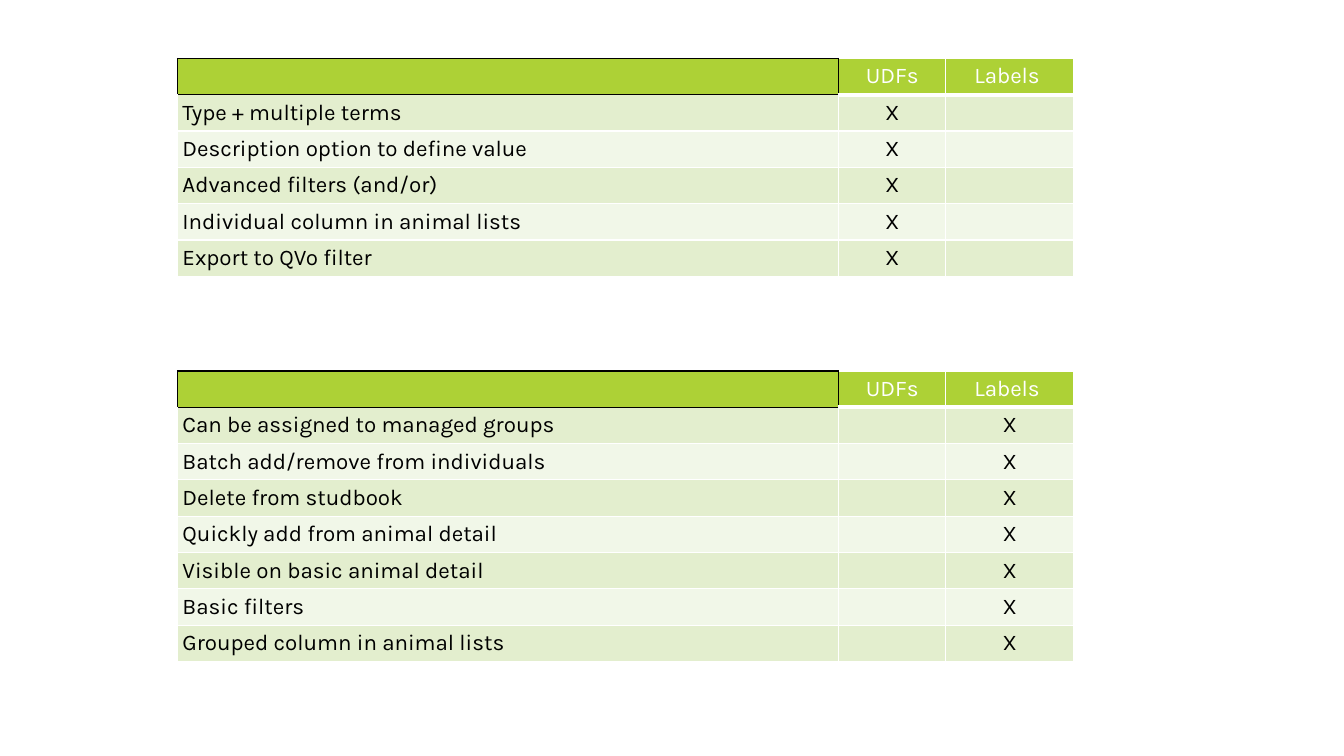
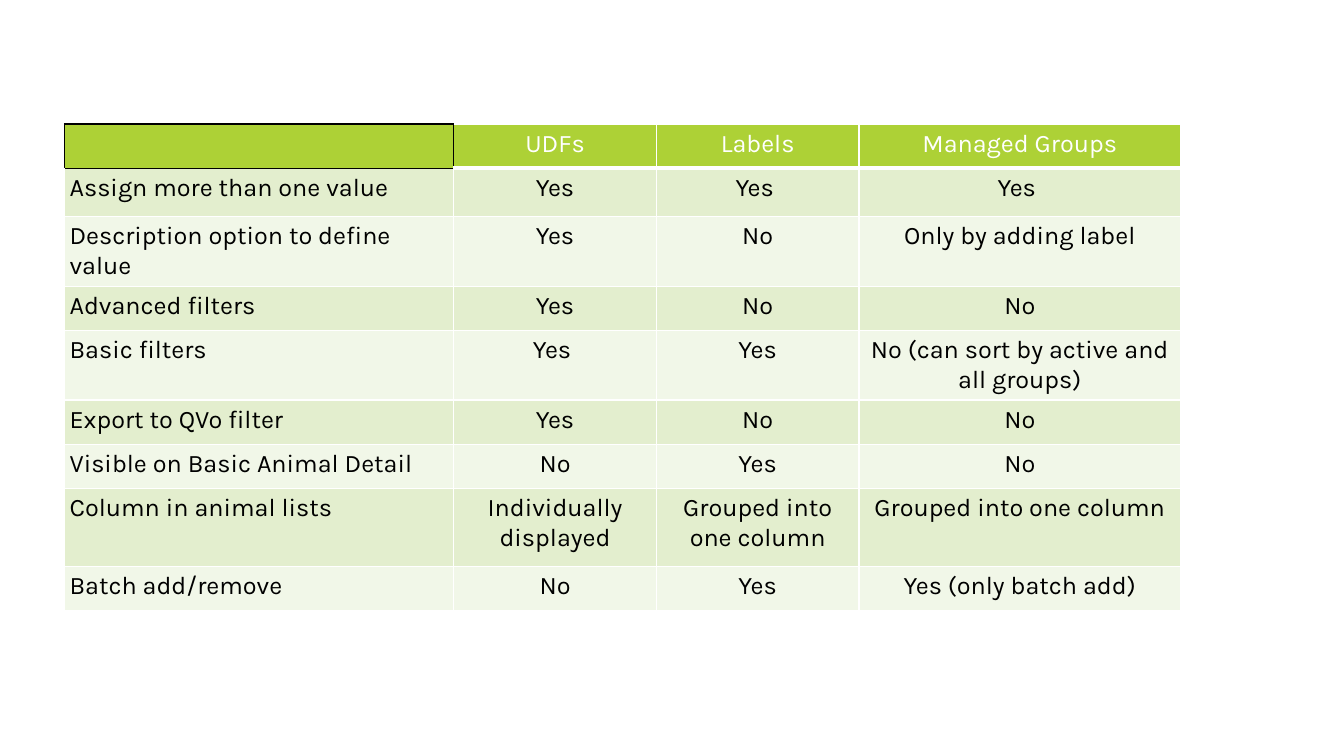
from lxml.etree import SubElement
from pptx import Presentation
from pptx.dml.color import RGBColor
from pptx.enum.text import PP_ALIGN as Align
from pptx.oxml.ns import qn
from pptx.util import Inches, Pt

FONT = "Karla"
GREEN, PALE, LIGHT = "ADD136", "E3EECE", "F1F7E8"
WHITE, BLACK = "FFFFFF", "000000"
PAD = 0.05

UDF_ONLY = [
    "Type + multiple terms",
    "Description option to define value",
    "Advanced filters (and/or)",
    "Individual column in animal lists",
    "Export to QVo filter",
]
LABEL_ONLY = [
    "Can be assigned to managed groups",
    "Batch add/remove from individuals",
    "Delete from studbook",
    "Quickly add from animal detail",
    "Visible on basic animal detail",
    "Basic filters",
    "Grouped column in animal lists",
]
PAIR = ("", "UDFs", "Labels ")
COMPARE = [
    ("", "UDFs", "Labels", "Managed Groups"),
    ("Assign more than one value", "Yes", "Yes ", "Yes "),
    ("Description option to define value", "Yes", "No", "Only by adding label"),
    ("Advanced filters", "Yes", "No", "No"),
    ("Basic filters", "Yes ", "Yes", "No (can sort by active and all groups)"),
    ("Export to QVo filter", "Yes", "No", "No"),
    ("Visible on Basic Animal Detail", "No", "Yes", "No"),
    ("Column in animal lists", "Individually displayed",
     "Grouped into one column", "Grouped into one column"),
    ("Batch add/remove", "No", "Yes", "Yes (only batch add)"),
]

# Each slide is a list of tables: left, top, column widths, row heights, size, rows
PAIR_COLS = (6.56, 1.06, 1.27)
SLIDES = [
    [
        (1.76, 0.58, PAIR_COLS, [0.36] * 6, 16,
         [PAIR] + [(text, "X", "") for text in UDF_ONLY]),
        (1.76, 3.68, PAIR_COLS, [0.36] * 8, 16,
         [PAIR] + [(text, "", "X") for text in LABEL_ONLY]),
    ],
    [
        (0.64, 1.23, (3.86, 2.01, 2.01, 3.19),
         [0.44, 0.48, 0.69, 0.44, 0.69, 0.44, 0.44, 0.77, 0.44], 18, COMPARE),
    ],
]


def rgb(code):
    return RGBColor.from_string(code)


def edges(row, col):
    """Give the colour and width of the four sides of a cell."""
    if row == col == 0:
        return dict.fromkeys("LRTB", (BLACK, 1))
    sides = dict.fromkeys("LRTB", (WHITE, 1))
    if row == 0:
        sides["B"] = (WHITE, 3)
        if col == 1:
            sides["L"] = (BLACK, 1)
    elif (row, col) == (1, 0):
        sides["T"] = (BLACK, 1)
    return sides


def add_edges(cell, sides):
    props = cell._tc.get_or_add_tcPr()
    for side, (color, width) in sides.items():
        line = SubElement(props, qn(f"a:ln{side}"), w=str(Pt(width)))
        fill = SubElement(line, qn("a:solidFill"))
        SubElement(fill, qn("a:srgbClr"), val=color)


def add_text(cell, text, size, color, align):
    para = cell.text_frame.paragraphs[0]
    para.alignment = align
    if text:
        run = para.add_run()
        run.text = text
        run.font.name, run.font.size = FONT, Pt(size)
        run.font.bold = False
        run.font.color.rgb = rgb(color)
    else:
        # The end mark keeps an empty cell from stretching its row
        end = SubElement(para._p, qn("a:endParaRPr"), sz=str(size * 100))
        SubElement(end, qn("a:latin"), typeface=FONT)


def draw_cell(cell, row, col, text, size):
    cell.margin_left = cell.margin_right = Inches(PAD)
    cell.margin_top = cell.margin_bottom = Inches(PAD)
    add_edges(cell, edges(row, col))
    cell.fill.solid()
    cell.fill.fore_color.rgb = rgb((PALE if row % 2 else LIGHT) if row else GREEN)
    add_text(cell, text, size, BLACK if row else WHITE,
             Align.CENTER if col else Align.LEFT)


def draw_table(slide, left, top, cols, heights, size, rows):
    box = map(Inches, (left, top, sum(cols), sum(heights)))
    table = slide.shapes.add_table(len(rows), len(cols), *box).table
    for column, width in zip(table.columns, cols):
        column.width = Inches(width)
    for r, (texts, height) in enumerate(zip(rows, heights)):
        table.rows[r].height = Inches(height)
        for c, text in enumerate(texts):
            draw_cell(table.cell(r, c), r, c, text, size)


def main():
    deck = Presentation()
    deck.slide_width, deck.slide_height = Inches(13.33), Inches(7.5)
    blank = deck.slide_layouts[6]
    for tables in SLIDES:
        slide = deck.slides.add_slide(blank)
        for table in tables:
            draw_table(slide, *table)
    deck.save("out.pptx")


if __name__ == "__main__":
    main()
